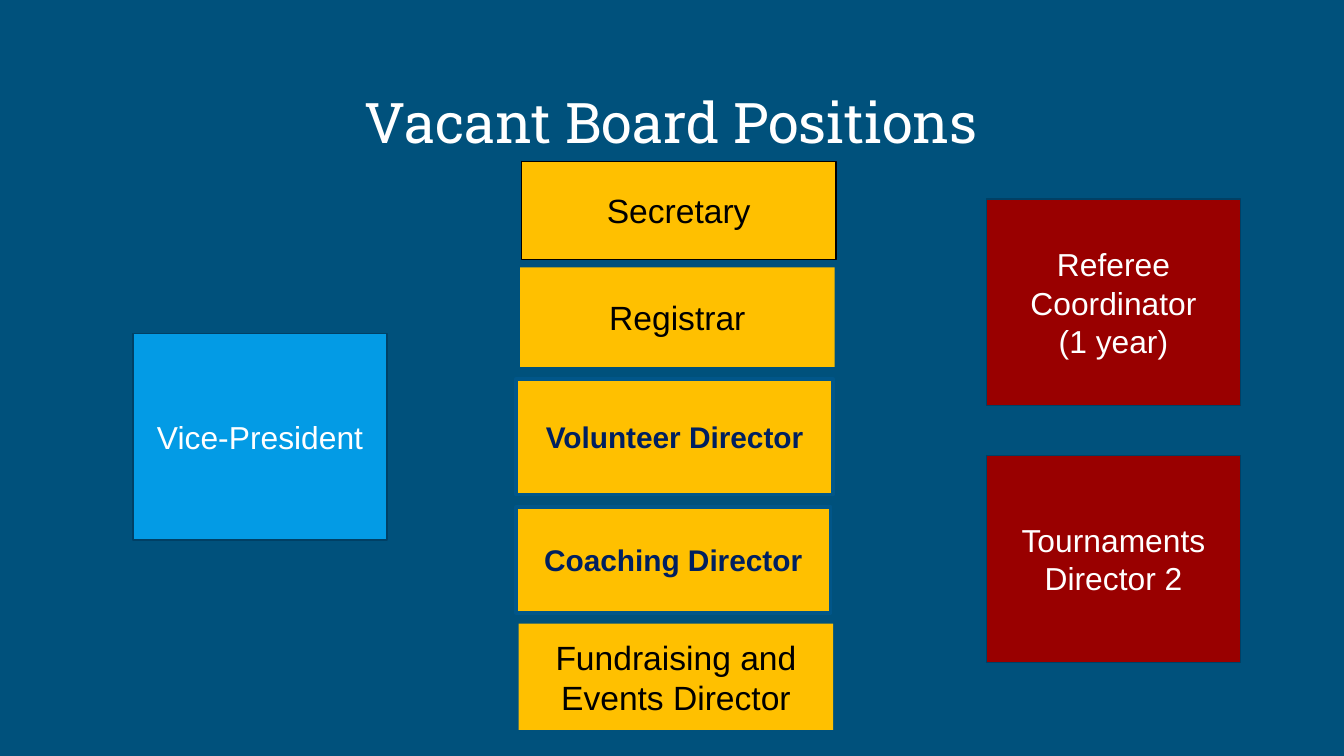
import pptx
import pptx.dml.color
import pptx.enum.shapes
import pptx.enum.text
import pptx.util
from pptx.util import Inches

ANCHOR = pptx.enum.text.MSO_ANCHOR


def color(hex_string):
    return pptx.dml.color.RGBColor.from_string(hex_string)


def format_text(text_frame, anchor, vertical_inset, font_name, size, text_color, bold=False):
    text_frame.word_wrap = True
    text_frame.auto_size = pptx.enum.text.MSO_AUTO_SIZE.NONE
    text_frame.vertical_anchor = anchor
    text_frame.margin_left = text_frame.margin_right = Inches(0.1)
    text_frame.margin_top = text_frame.margin_bottom = Inches(vertical_inset)
    for paragraph in text_frame.paragraphs:
        paragraph.alignment = pptx.enum.text.PP_ALIGN.CENTER
        for run in paragraph.runs:
            run.font.name = font_name
            run.font.size = pptx.util.Pt(size)
            run.font.bold = bold
            run.font.color.rgb = color(text_color)


presentation = pptx.Presentation()
presentation.slide_width = Inches(10)
presentation.slide_height = Inches(10 * 9 / 16)
slide = presentation.slides.add_slide(presentation.slide_layouts[5])
slide.background.fill.solid()
slide.background.fill.fore_color.rgb = color("00517C")

title = slide.shapes.title
title.left, title.top = Inches(0.42), Inches(0.5)
title.width, title.height = Inches(9.15), Inches(0.75)
title.text_frame.text = "Vacant Board Positions"
format_text(title.text_frame, ANCHOR.BOTTOM, 0.1, "Roboto Slab", 30, "FFFFFF")

# Style: fill, line colour, line width, vertical inset, text size, text colour, bold
RED = ("990000", "004065", 0.75, 0.1, 17, "FFFFFF", False)
BLUE = ("039BE5", "004065", 0.75, 0.1, 17, "FFFFFF", False)
GOLD = ("FFC000", None, 0, 0.1, 18, "000000", False)
GOLD_OUTLINED = ("FFC000", "000000", 0.75, 0.1, 18, "000000", False)
GOLD_BOLD = ("FFC000", "015689", 2, 0.05, 16, "002060", True)

positions = [
    ("Tournaments Director 2", 7.34, 3.39, 1.89, 1.54, RED),
    ("Registrar", 3.87, 1.99, 2.34, 0.74, GOLD),
    ("Referee Coordinator\n(1 year)", 7.34, 1.48, 1.89, 1.54, RED),
    ("Secretary", 3.88, 1.2, 2.34, 0.73, GOLD_OUTLINED),
    ("Fundraising and Events Director", 3.86, 4.64, 2.34, 0.79, GOLD),
    ("Coaching Director", 3.84, 3.77, 2.34, 0.79, GOLD_BOLD),
    ("Volunteer Director", 3.84, 2.82, 2.36, 0.86, GOLD_BOLD),
    ("Vice-President", 0.99, 2.48, 1.89, 1.54, BLUE),
]
for name, left, top, width, height, style in positions:
    fill, line_color, line_width, inset, size, text_color, bold = style
    shape = slide.shapes.add_shape(
        pptx.enum.shapes.MSO_SHAPE.RECTANGLE,
        Inches(left), Inches(top), Inches(width), Inches(height))
    shape.shadow.inherit = False
    shape.fill.solid()
    shape.fill.fore_color.rgb = color(fill)
    if line_color:
        shape.line.color.rgb = color(line_color)
        shape.line.width = pptx.util.Pt(line_width)
    else:
        shape.line.fill.background()
    shape.text_frame.text = name
    format_text(shape.text_frame, ANCHOR.MIDDLE, inset, "Arial", size, text_color, bold)

presentation.save("out.pptx")
